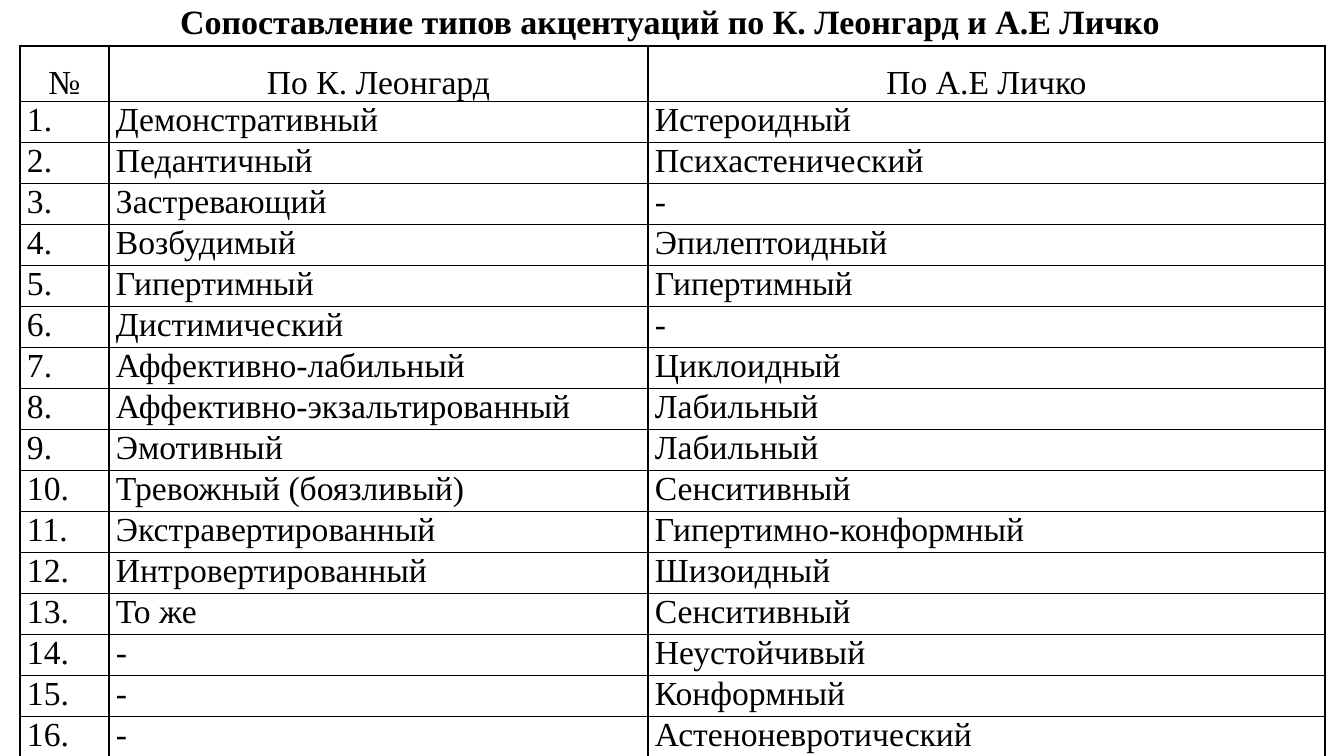
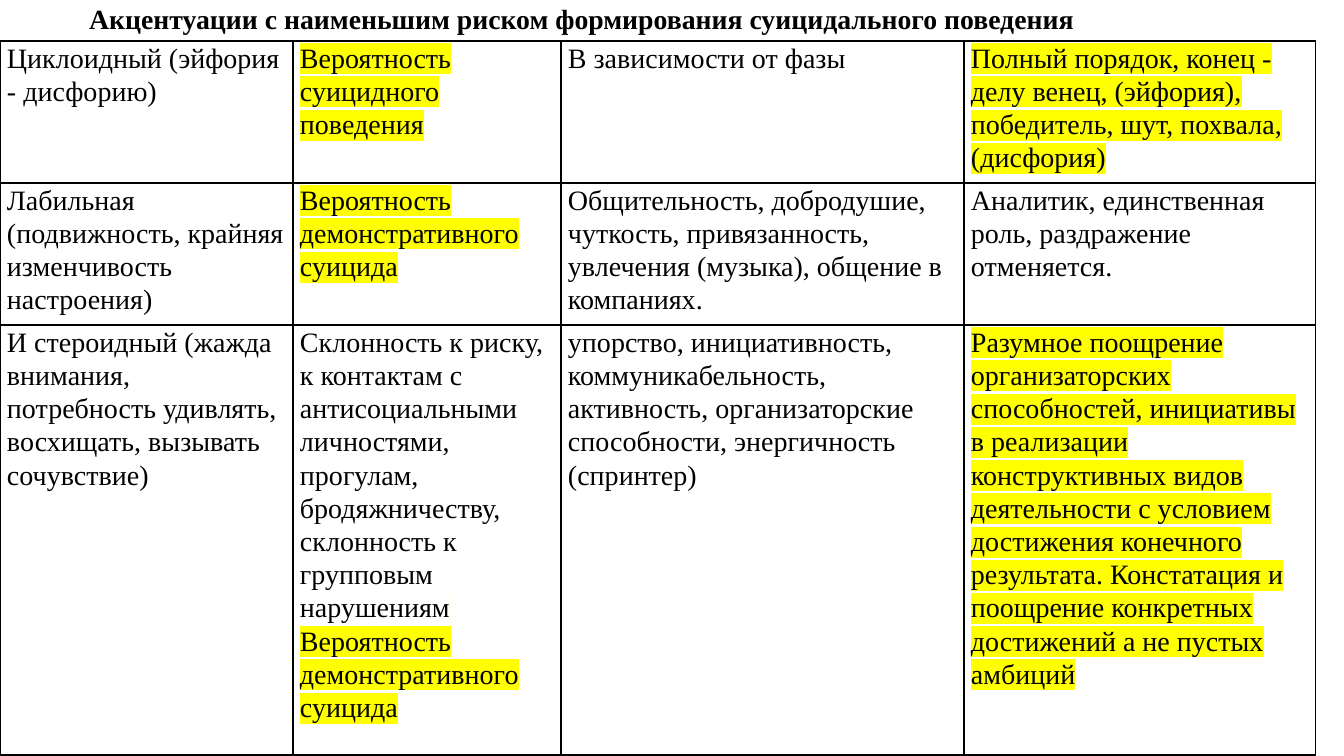
import lxml.etree
import pptx
import pptx.dml.color
import pptx.enum.text
import pptx.oxml.ns
import pptx.util

PX = 914400 / 100.8
BLACK = pptx.dml.color.RGBColor(0, 0, 0)
YELLOW = pptx.dml.color.RGBColor(255, 255, 0)
ALIGN = pptx.enum.text.PP_ALIGN
TITLE_ONLY = 5

BASE_FONT = {"name": "Times New Roman", "bold": False}
TITLE_FRAME = {
    "word_wrap": True,
    "auto_size": pptx.enum.text.MSO_AUTO_SIZE.NONE,
    "vertical_anchor": pptx.enum.text.MSO_ANCHOR.MIDDLE,
}
TABLE_STYLE = {"first_row": False, "horz_banding": False}

TYPE_PAIRS = [
    ("Демонстративный", "Истероидный"),
    ("Педантичный", "Психастенический"),
    ("Застревающий", "-"),
    ("Возбудимый", "Эпилептоидный"),
    ("Гипертимный", "Гипертимный"),
    ("Дистимический", "-"),
    ("Аффективно-лабильный", "Циклоидный"),
    ("Аффективно-экзальтированный", "Лабильный"),
    ("Эмотивный", "Лабильный"),
    ("Тревожный (боязливый)", "Сенситивный"),
    ("Экстравертированный", "Гипертимно-конформный"),
    ("Интровертированный", "Шизоидный"),
    ("То же", "Сенситивный"),
    ("-", "Неустойчивый"),
    ("-", "Конформный"),
    ("-", "Астеноневротический"),
]

# Each risk cell holds its plain text, then its highlighted text.
RISK_ROWS = [
    [
        ("Циклоидный (эйфория - дисфорию)", ""),
        ("", "Вероятность суицидного поведения"),
        ("В зависимости от фазы", ""),
        ("", "Полный порядок, конец - делу венец, (эйфория), победитель, "
             "шут, похвала, (дисфория)"),
    ],
    [
        ("Лабильная (подвижность, крайняя изменчивость настроения)", ""),
        ("", "Вероятность демонстративного суицида"),
        ("Общительность, добродушие, чуткость, привязанность, "
         "увлечения (музыка), общение в компаниях.", ""),
        ("Аналитик, единственная роль, раздражение отменяется.", ""),
    ],
    [
        ("И стероидный (жажда внимания, потребность удивлять, "
         "восхищать, вызывать сочувствие)", ""),
        ("Склонность к риску, к контактам с антисоциальными личностями, "
         "прогулам, бродяжничеству, склонность к групповым нарушениям",
         " Вероятность демонстративного суицида"),
        ("упорство, инициативность, коммуникабельность, активность, "
         "организаторские способности, энергичность (спринтер)", ""),
        ("", "Разумное поощрение организаторских способностей, инициативы "
             "в реализации конструктивных видов деятельности с условием "
             "достижения конечного результата. Констатация и поощрение "
             "конкретных достижений а не пустых амбиций"),
    ],
]


def px(length):
    return pptx.util.Emu(round(length * PX))


def apply_format(target, values):
    for attribute, value in values.items():
        setattr(target, attribute, value)


def add_child(parent, tag, **attributes):
    return lxml.etree.SubElement(parent, pptx.oxml.ns.qn(tag), attributes)


def add_run(paragraph, text, size, bold=False, highlight=None):
    run = paragraph.add_run()
    run.text = text
    apply_format(run.font, {**BASE_FONT, "size": pptx.util.Pt(size), "bold": bold})
    run.font.color.rgb = BLACK
    if highlight is not None:
        properties = run._r.get_or_add_rPr()
        mark = add_child(properties, "a:highlight")
        add_child(mark, "a:srgbClr", val=str(highlight))
        properties.find(pptx.oxml.ns.qn("a:solidFill")).addnext(mark)


def add_title(slide, box, text, size, alignment):
    title = slide.shapes.title
    apply_format(title, dict(zip(("left", "top", "width", "height"), map(px, box))))
    apply_format(title.text_frame, TITLE_FRAME)
    paragraph = title.text_frame.paragraphs[0]
    apply_format(paragraph, {"alignment": alignment, "line_spacing": 0.9})
    add_run(paragraph, text, size, bold=True)


def outline_cell(cell):
    properties = cell._tc.get_or_add_tcPr()
    for position, side in enumerate(("a:lnL", "a:lnR", "a:lnT", "a:lnB")):
        border = add_child(properties, side, w=str(pptx.util.Pt(1)))
        add_child(add_child(border, "a:solidFill"), "a:srgbClr", val=str(BLACK))
        properties.insert(position, border)


def fill_cell(cell, texts, size, paragraph_format):
    margins = {"margin_left": px(7), "margin_right": px(7),
               "margin_top": 0, "margin_bottom": 0}
    apply_format(cell, margins)
    cell.fill.background()
    outline_cell(cell)
    paragraph = cell.text_frame.paragraphs[0]
    apply_format(paragraph, paragraph_format)
    for text, highlight in zip(texts, (None, YELLOW)):
        if text:
            add_run(paragraph, text, size, highlight=highlight)


def add_grid(slide, corner, widths, heights, rows, size, row_formats):
    left, top = corner
    box = map(px, (left, top, sum(widths), sum(heights)))
    table = slide.shapes.add_table(len(heights), len(widths), *box).table
    apply_format(table, TABLE_STYLE)
    for column, width in zip(table.columns, widths):
        column.width = px(width)
    for row, height, cells, row_format in zip(table.rows, heights, rows, row_formats):
        row.height = px(height)
        for cell, texts in zip(row.cells, cells):
            fill_cell(cell, texts, size, row_format)


def build_comparison(slide):
    add_title(slide, (17, 0, 1306, 46),
              "Сопоставление типов акцентуаций по К. Леонгард и А.Е Личко",
              24.3, ALIGN.CENTER)
    header = [("№",), ("По К. Леонгард",), ("По А.Е Личко",)]
    body = [[(f"{number}.",), (leonhard,), (lichko,)]
            for number, (leonhard, lichko) in enumerate(TYPE_PAIRS, 1)]
    header_format = {"alignment": ALIGN.CENTER, "line_spacing": 1.5}
    body_format = {"alignment": ALIGN.LEFT, "line_spacing": 1.0}
    add_grid(slide, (20, 46), (89, 539, 677), [54] + [41] * len(body),
             [header] + body, 24, [header_format] + [body_format] * len(body))


def build_risks(slide):
    add_title(slide, (79, 0, 1159, 41),
              "Акцентуации с наименьшим риском формирования суицидального поведения",
              19.8, ALIGN.LEFT)
    row_format = {"alignment": ALIGN.LEFT, "line_spacing": 1.07}
    add_grid(slide, (0, 41), (293, 268, 403, 352), (142, 142, 430),
             RISK_ROWS, 20, [row_format] * len(RISK_ROWS))


def main():
    deck = pptx.Presentation()
    apply_format(deck, {"slide_width": px(1344), "slide_height": px(756)})
    for build in (build_comparison, build_risks):
        build(deck.slides.add_slide(deck.slide_layouts[TITLE_ONLY]))
    deck.save("out.pptx")


if __name__ == "__main__":
    main()
